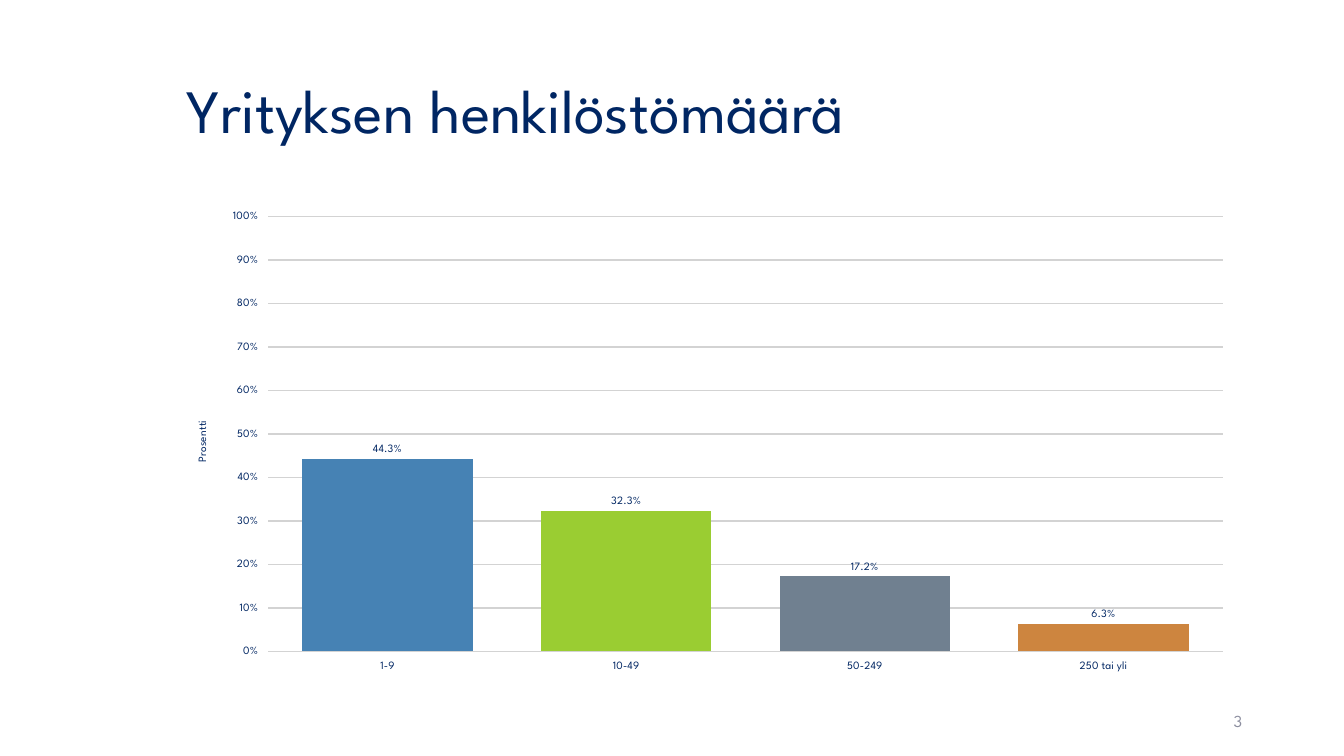
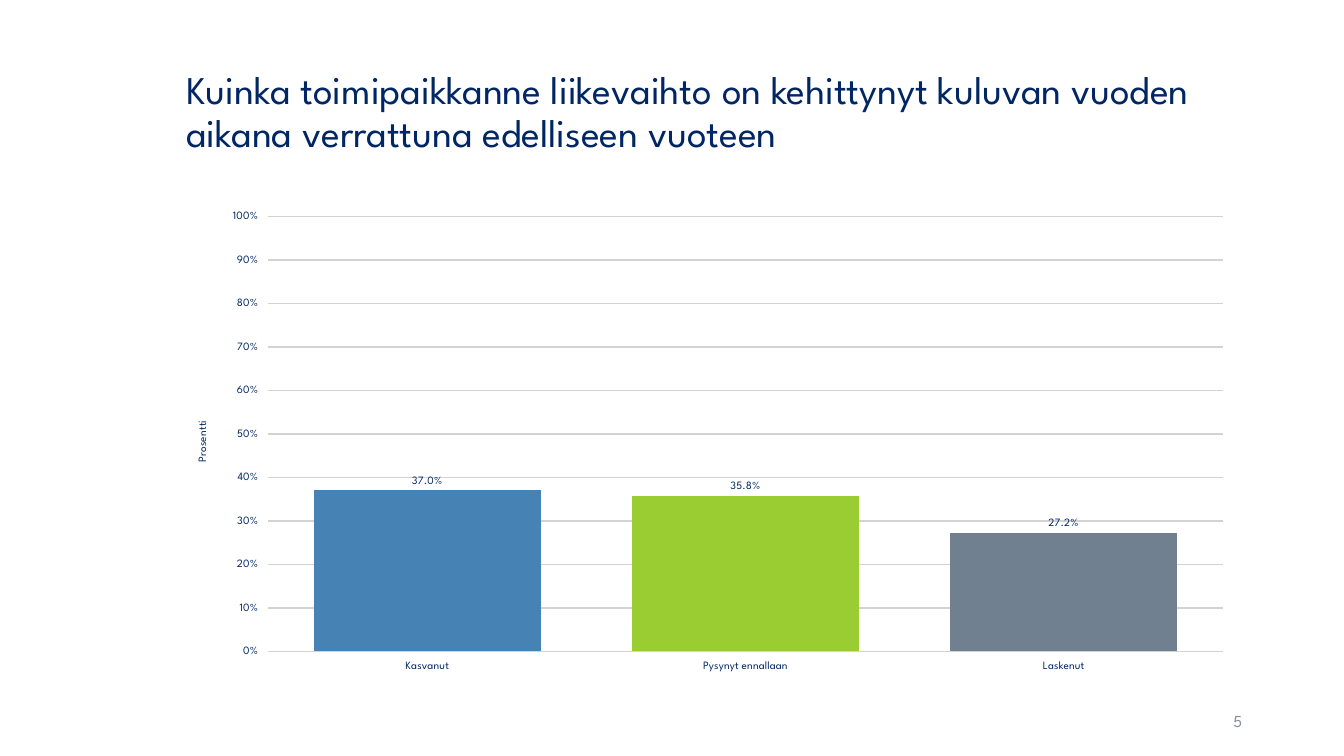
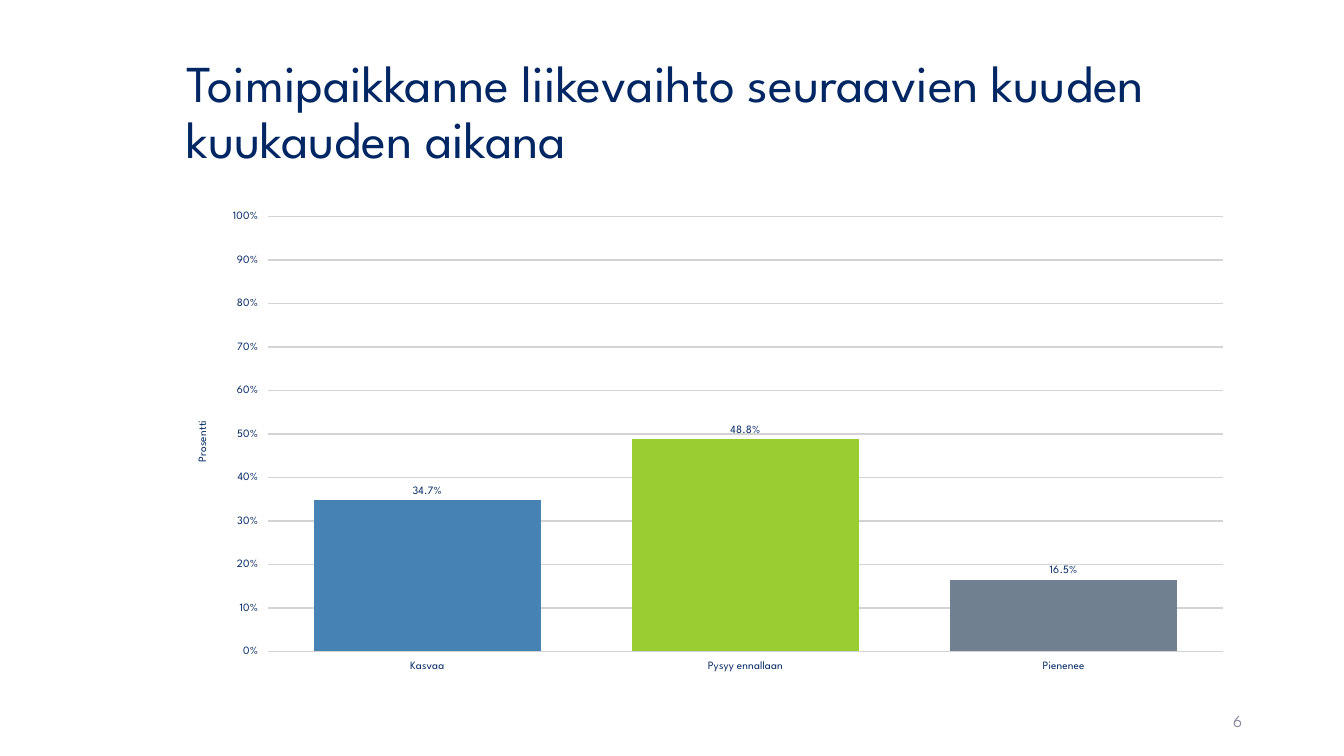
from dataclasses import dataclass

import pptx
import pptx.chart.data
import pptx.dml.color
import pptx.enum.chart
import pptx.enum.text
import pptx.oxml.ns
import pptx.util

PX = 9144  # EMU; 100 px to the inch
FONT = "League Spartan"
COLORS = {"navy": "002663", "page": "8C8E9F", "grid": "D3D3D3"}
BAR_COLORS = ["4682B4", "9ACD32", "708090", "CD853F"]

ANCHOR = pptx.enum.text.MSO_ANCHOR
ALIGN = pptx.enum.text.PP_ALIGN
XL = pptx.enum.chart


@dataclass(frozen=True)
class Box:
    left: int
    top: int
    width: int
    height: int

    def emu(self) -> list[int]:
        return [v * PX for v in (self.left, self.top, self.width, self.height)]


@dataclass(frozen=True)
class Question:
    title: str
    title_size: int
    page: int
    shares: dict[str, float]


TITLE_BOX = Box(175, 40, 1059, 145)
PAGE_BOX = Box(942, 695, 300, 40)
CHART_BOX = Box(175, 200, 1059, 476)

QUESTIONS = [
    Question("Yrityksen henkilöstömäärä", 44, 3,
             {"1-9": 0.443, "10-49": 0.323, "50-249": 0.172, "250 tai yli": 0.063}),
    Question("Kuinka toimipaikkanne liikevaihto on kehittynyt kuluvan vuoden "
             "aikana verrattuna edelliseen vuoteen", 28, 5,
             {"Kasvanut": 0.37, "Pysynyt ennallaan": 0.358, "Laskenut": 0.272}),
    Question("Toimipaikkanne liikevaihto seuraavien kuuden kuukauden aikana", 37, 6,
             {"Kasvaa": 0.347, "Pysyy ennallaan": 0.488, "Pienenee": 0.165}),
]


def rgb(hex_color: str) -> pptx.dml.color.RGBColor:
    return pptx.dml.color.RGBColor.from_string(hex_color)


def style_font(font, size: int, color: str) -> None:
    font.name = FONT
    font.size = pptx.util.Pt(size)
    font.bold = False
    font.color.rgb = rgb(COLORS[color])


def add_text(s, box: Box, text: str, size: int, color: str,
             align: ALIGN = ALIGN.LEFT, line_spacing: float = 1.0) -> None:
    tf = s.shapes.add_textbox(*box.emu()).text_frame
    tf.word_wrap = True
    tf.vertical_anchor = ANCHOR.MIDDLE
    p = tf.paragraphs[0]
    p.text = text
    p.alignment = align
    p.line_spacing = line_spacing
    style_font(p.font, size, color)


def style_axis(axis, number_format: str) -> None:
    axis.major_tick_mark = XL.XL_TICK_MARK.OUTSIDE
    axis.minor_tick_mark = XL.XL_TICK_MARK.NONE
    axis.format.line.fill.background()
    axis.tick_labels.number_format = number_format
    axis.tick_labels.number_format_is_linked = False
    style_font(axis.tick_labels.font, 8, "navy")


def style_value_axis(axis) -> None:
    style_axis(axis, "0%")
    axis.minimum_scale, axis.maximum_scale = 0, 1
    axis.major_unit = 0.1
    axis.has_major_gridlines = True
    grid = axis.major_gridlines.format.line
    grid.color.rgb = rgb(COLORS["grid"])
    grid.width = pptx.util.Pt(1)
    tf = axis.axis_title.text_frame
    tf.text = "Prosentti"
    style_font(tf.paragraphs[0].font, 8, "navy")
    body = axis.axis_title._element.find(".//" + pptx.oxml.ns.qn("a:bodyPr"))
    body.set("rot", "-5400000")
    body.set("vert", "horz")


def add_share_chart(s, shares: dict[str, float]) -> None:
    data = pptx.chart.data.CategoryChartData(number_format="0.0%")
    data.categories = list(shares)
    data.add_series("Series 1", list(shares.values()))
    chart = s.shapes.add_chart(
        XL.XL_CHART_TYPE.COLUMN_CLUSTERED, *CHART_BOX.emu(), data).chart
    chart.has_title = False
    chart.has_legend = False
    style_font(chart.font, 18, "navy")
    style_axis(chart.category_axis, "General")
    style_value_axis(chart.value_axis)

    plot = chart.plots[0]
    plot.gap_width = 40
    plot.overlap = -2
    plot.vary_by_categories = False
    series = plot.series[0]
    series.format.fill.solid()
    series.format.fill.fore_color.rgb = rgb(BAR_COLORS[0])
    for i, color in enumerate(BAR_COLORS[:len(shares)]):
        fill = series.points[i].format.fill
        fill.solid()
        fill.fore_color.rgb = rgb(color)

    labels = series.data_labels
    labels.show_value = True
    labels.position = XL.XL_LABEL_POSITION.OUTSIDE_END
    labels.number_format = "0.0%"
    labels.number_format_is_linked = False
    style_font(labels.font, 8, "navy")


def add_question_slide(prs, question: Question) -> None:
    s = prs.slides.add_slide(prs.slide_layouts[6])
    add_text(s, TITLE_BOX, question.title, question.title_size, "navy",
             line_spacing=0.9)
    add_text(s, PAGE_BOX, str(question.page), 12, "page", align=ALIGN.RIGHT)
    add_share_chart(s, question.shares)


def main() -> None:
    prs = pptx.Presentation()
    prs.slide_width, prs.slide_height = 1333 * PX, 750 * PX
    for question in QUESTIONS:
        add_question_slide(prs, question)
    prs.save("out.pptx")


if __name__ == "__main__":
    main()
